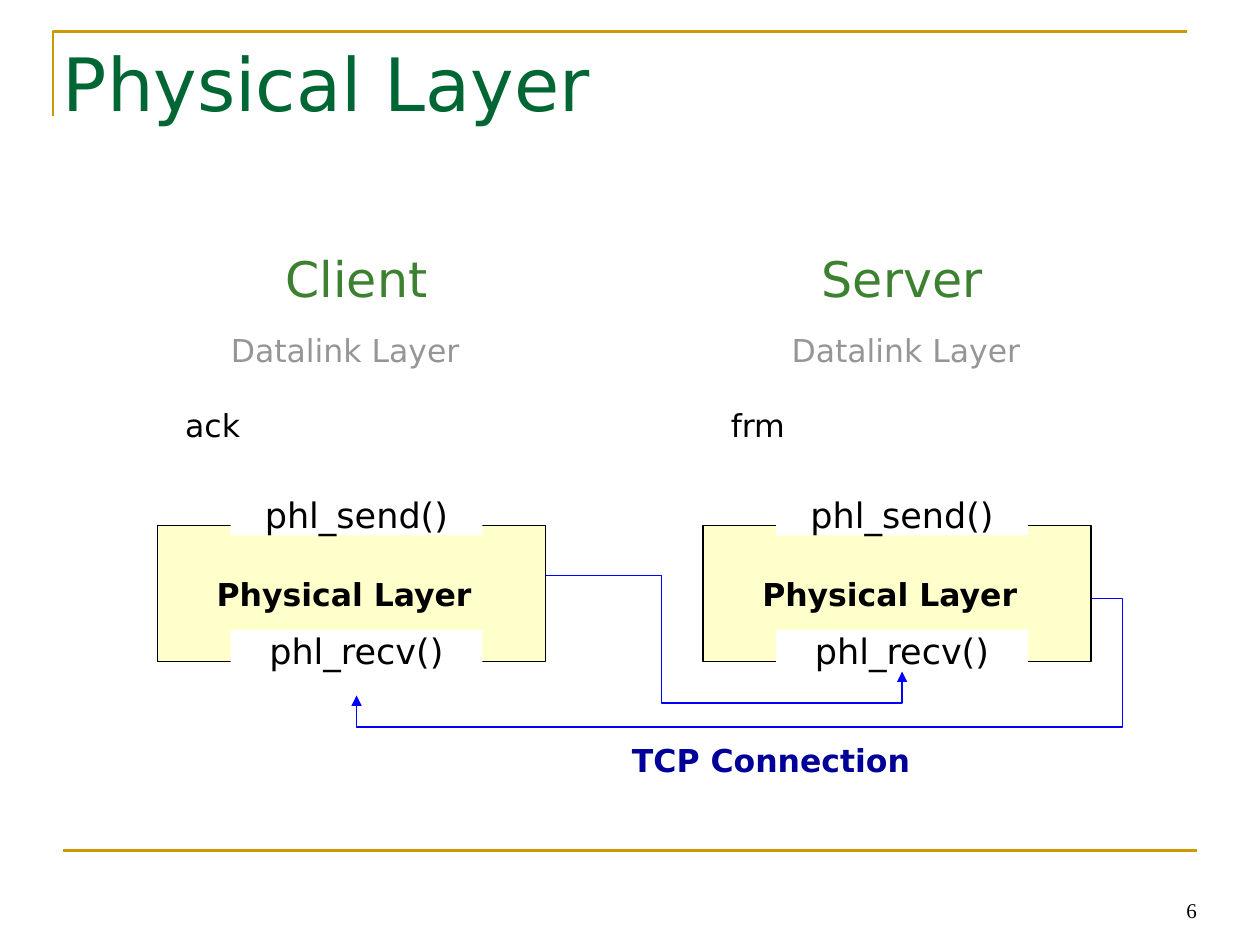
import pptx
import pptx.util
import pptx.dml.color
import pptx.enum.shapes
import pptx.enum.text
import pptx.oxml
import pptx.oxml.ns
from dataclasses import dataclass

Inches = pptx.util.Inches
Align = pptx.enum.text.PP_ALIGN
Anchor = pptx.enum.text.MSO_ANCHOR


@dataclass(frozen=True)
class Theme:
    sans: str = "DejaVu Sans"
    serif: str = "Times New Roman"
    gold: str = "CC9900"
    title: str = "006633"
    head: str = "3B812F"
    gray: str = "969696"
    navy: str = "000099"
    blue: str = "0000FF"
    cream: str = "FFFFCC"
    white: str = "FFFFFF"
    black: str = "000000"
    huge: int = 42
    large: int = 28
    call: int = 20
    body: int = 18
    small: int = 12
    rule: float = 1.5
    thin: float = 0.75


THEME = Theme()


def rgb(code):
    return pptx.dml.color.RGBColor.from_string(code)


def write(shape, text, size, color, align=Align.CENTER, anchor=Anchor.TOP,
          pad=0.0, left=None, bold=False, font=THEME.sans):
    """Fill a shape's frame with one styled line; left overrides the left inset."""
    frame = shape.text_frame
    inset = Inches(pad)
    form = dict(word_wrap=True, vertical_anchor=anchor,
                margin_left=inset if left is None else Inches(left),
                margin_right=inset, margin_top=inset, margin_bottom=inset)
    for key, value in form.items():
        setattr(frame, key, value)
    para = frame.paragraphs[0]
    para.alignment = align
    run = para.add_run()
    run.text = text
    form = dict(name=font, size=pptx.util.Pt(size), bold=bold)
    for key, value in form.items():
        setattr(run.font, key, value)
    run.font.color.rgb = rgb(color)


def label(shapes, box, text, size, color, **form):
    write(shapes.add_textbox(*map(Inches, box)), text, size, color, **form)


def block(shapes, box, fill, line=None):
    shape = shapes.add_shape(pptx.enum.shapes.MSO_SHAPE.RECTANGLE,
                             *map(Inches, box))
    shape.shadow.inherit = False
    shape.fill.solid()
    shape.fill.fore_color.rgb = rgb(fill)
    if line:
        stroke(shape, line, THEME.thin)
    else:
        shape.line.fill.background()
    return shape


def stroke(shape, color, width):
    shape.line.color.rgb = rgb(color)
    shape.line.width = pptx.util.Pt(width)


def route(shapes, points, color, width, arrow=False):
    """Draw an open bent line through the points."""
    start, *rest = [tuple(map(Inches, point)) for point in points]
    pen = shapes.build_freeform(*start)
    pen.add_line_segments(rest, close=False)
    shape = pen.convert_to_shape()
    shape.shadow.inherit = False
    shape.fill.background()
    stroke(shape, color, width)
    if arrow:
        line = shape.line._get_or_add_ln()
        line.append(pptx.oxml.parse_xml(
            '<a:tailEnd %s type="triangle"/>' % pptx.oxml.ns.nsdecls("a")))


def frame(shapes, box):
    """Title, rules and page number of the slide."""
    x, y, w, h = box
    route(shapes, [(x - 0.08, y + 0.92), (x - 0.08, y + 0.25),
                   (x + w - 0.08, y + 0.25)], THEME.gold, THEME.rule)
    foot = y + h - 0.75
    rule = shapes.add_connector(pptx.enum.shapes.MSO_CONNECTOR.STRAIGHT,
                                *map(Inches, (x, foot, x + w, foot)))
    stroke(rule, THEME.gold, THEME.rule)
    rule._element.spPr.append(pptx.oxml.parse_xml(
        "<a:effectLst %s/>" % pptx.oxml.ns.nsdecls("a")))
    label(shapes, (x, y + 0.3, w, 1.25), "Physical Layer", THEME.huge,
          THEME.title, align=Align.LEFT)
    label(shapes, (x + w - 2.33, foot + 0.28, 2.33, 0.29), "6", THEME.small,
          THEME.black, align=Align.RIGHT, anchor=Anchor.BOTTOM,
          font=THEME.serif)


def host(shapes, box, name, data, span, wide, left):
    """One end of the link: headings above a physical layer block."""
    x, y, w, h = box
    mid = x + 1.58
    label(shapes, (mid - span / 2, y - 2.25, span, 0.57), name,
          THEME.large, THEME.head, pad=0.05)
    label(shapes, (x - 0.33, y - 1.59, wide, 0.41), "Datalink Layer",
          THEME.body, THEME.gray, pad=0.05, left=left)
    label(shapes, (x + 0.17, y - 1, 0.83, 0.41), data, THEME.body,
          THEME.black, align=Align.LEFT, pad=0.05)
    layer = shapes.add_group_shape().shapes
    block(layer, box, THEME.cream, THEME.black)
    label(layer, (x + 0.47, y + 0.34, 2.14, 0.41), "Physical Layer",
          THEME.body, THEME.black, align=Align.LEFT, anchor=Anchor.MIDDLE,
          bold=True)
    for text, top in (("phl_send()", y - 0.25), ("phl_recv()", y + h - 0.25)):
        call = block(shapes, (mid - 1, top, 2, 0.33), THEME.white)
        write(call, text, THEME.call, THEME.black)


def links(shapes, client, server):
    """Both directions of the connection, with its caption."""
    cx, y, w, h = client
    sx = server[0]
    out, back = y + 0.4, y + 0.58
    base = y + h
    send = [(cx + w, out), (cx + w + 0.92, out), (cx + w + 0.92, base + 0.33),
            (sx + 1.58, base + 0.33), (sx + 1.58, base + 0.08)]
    reply = [(sx + w, back), (sx + w + 0.25, back),
             (sx + w + 0.25, base + 0.52), (cx + 1.58, base + 0.52),
             (cx + 1.58, base + 0.27)]
    for points in (send, reply):
        route(shapes, points, THEME.blue, THEME.thin, arrow=True)
    label(shapes, (cx + 2.58, base + 0.58, 4.58, 0.41), "TCP Connection",
          THEME.body, THEME.navy, pad=0.05, bold=True)


def main():
    deck = pptx.Presentation()
    deck.slide_width, deck.slide_height = Inches(10), Inches(7.5)
    shapes = deck.slides.add_slide(deck.slide_layouts[6]).shapes
    client, server = [(x, 4.17, 3.08, 1.08) for x in (1.25, 5.58)]
    frame(shapes, (0.5, 0, 9, 7.5))
    links(shapes, client, server)
    host(shapes, client, "Client", "ack", span=2, wide=3.33, left=0.36)
    host(shapes, server, "Server", "frm", span=1.67, wide=3.42, left=0.51)
    deck.save("out.pptx")


if __name__ == "__main__":
    main()
